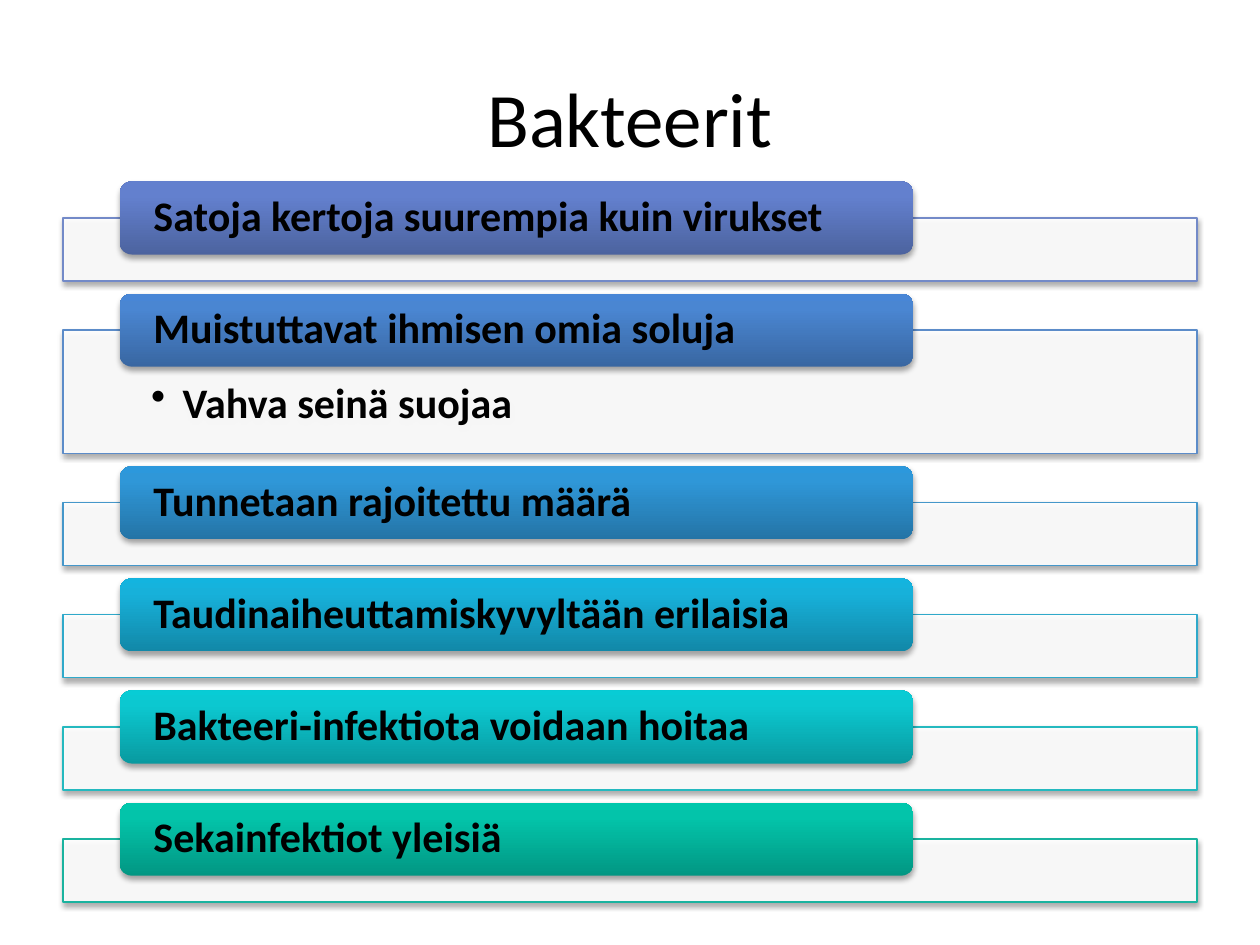
import dataclasses

import pptx
import pptx.dml.color
import pptx.enum.shapes
import pptx.enum.text
import pptx.oxml.ns
import pptx.util
from lxml import etree
from pptx.util import Inches


@dataclasses.dataclass(frozen=True)
class Theme:
    font: str = "Calibri"
    title_size: int = 44
    body_size: int = 24
    text: str = "000000"
    panel: str = "FFFFFF"
    shadow: str = "000000"


THEME = Theme()

# Heading, bullet, panel line, gradient from bottom to top
TOPICS = [
    ("Satoja kertoja suurempia kuin virukset", "", "738AC8",
     ("4C639F", "6380CE", "6180D1")),
    ("Muistuttavat ihmisen omia soluja", "Vahva seinä suojaa", "5C8CC9",
     ("3967A2", "4A86D2", "4886D6")),
    ("Tunnetaan rajoitettu määrä", "", "4597CA",
     ("2474A6", "2F97D8", "2C98DC")),
    ("Taudinaiheuttamiskyvyltään erilaisia", "", "2FA9CA",
     ("1288A8", "17B1DA", "13B4DF")),
    ("Bakteeri-infektiota voidaan hoitaa", "", "24B9BF",
     ("099AA0", "0CC8D0", "08CCD5")),
    ("Sekainfektiot yleisiä", "", "1AB39F",
     ("029783", "03C4AA", "00C8AD")),
]
GRADIENT_STOPS = (0, 80, 100)

FIRST_TOP = 1.73
PANEL_GAP = 0.39
PANEL_HEIGHT = 0.5
BULLET_PANEL_HEIGHT = 0.98
TAB_RISE = 0.29


def rgb(value):
    return pptx.dml.color.RGBColor.from_string(value)


def add_element(parent, tag, **attributes):
    element = etree.SubElement(parent, pptx.oxml.ns.qn(tag))
    for name, value in attributes.items():
        element.set(name, str(value))
    return element


def format_text(shape, size, bold, align, anchor, insets):
    frame = shape.text_frame
    frame.word_wrap = True
    frame.vertical_anchor = anchor
    (frame.margin_left, frame.margin_top,
     frame.margin_right, frame.margin_bottom) = map(Inches, insets)
    para = frame.paragraphs[0]
    para.alignment = align
    for span in para.runs:
        span.font.name = THEME.font
        span.font.size = pptx.util.Pt(size)
        span.font.bold = bold
        span.font.color.rgb = rgb(THEME.text)
    return para


def add_shadow(shape):
    shape.shadow.inherit = False
    effects = shape._element.spPr.find(pptx.oxml.ns.qn("a:effectLst"))
    outer = add_element(effects, "a:outerShdw", blurRad=40000, dist=23000,
                        dir=5400000, rotWithShape=0)
    color = add_element(outer, "a:srgbClr", val=THEME.shadow)
    add_element(color, "a:alpha", val=35000)


def fill_gradient(shape, colors):
    shape.fill.gradient()
    shape.fill.gradient_angle = 90
    stops = next(shape._element.spPr.iter(pptx.oxml.ns.qn("a:gsLst")))
    for stop in list(stops):
        stops.remove(stop)
    for position, color in zip(GRADIENT_STOPS, colors):
        stop = add_element(stops, "a:gs", pos=position * 1000)
        add_element(stop, "a:srgbClr", val=color)


def add_title(page, text):
    title = page.shapes.title
    title.left, title.top = Inches(0.5), Inches(0.3)
    title.width, title.height = Inches(9), Inches(1.25)
    title.text_frame.text = text
    format_text(title, THEME.title_size, False, pptx.enum.text.PP_ALIGN.CENTER,
                pptx.enum.text.MSO_ANCHOR.MIDDLE, (0.1, 0.05, 0.1, 0.05))


def add_panel(page, top, height, line_color, bullet):
    panel = page.shapes.add_shape(
        pptx.enum.shapes.MSO_SHAPE.RECTANGLE,
        Inches(0.5), Inches(top), Inches(9), Inches(height))
    panel.fill.solid()
    panel.fill.fore_color.rgb = rgb(THEME.panel)
    color = next(panel._element.spPr.iter(pptx.oxml.ns.qn("a:srgbClr")))
    add_element(color, "a:alpha", val=90000)
    panel.line.color.rgb = rgb(line_color)
    panel.line.width = pptx.util.Pt(0.75)
    add_shadow(panel)
    if bullet:
        panel.text_frame.text = bullet
        para = format_text(panel, THEME.body_size, True,
                           pptx.enum.text.PP_ALIGN.LEFT,
                           pptx.enum.text.MSO_ANCHOR.TOP,
                           (0.7, 0.41, 0.7, 0.19))
        para.line_spacing = 0.9
        properties = para._p.get_or_add_pPr()
        properties.set("marL", str(Inches(0.25)))
        properties.set("indent", str(-Inches(0.25)))
        add_element(properties, "a:buChar", char="•")


def add_tab(page, top, text, colors):
    tab = page.shapes.add_shape(
        pptx.enum.shapes.MSO_SHAPE.ROUNDED_RECTANGLE,
        Inches(0.95), Inches(top), Inches(6.3), Inches(2 * TAB_RISE))
    fill_gradient(tab, colors)
    tab.line.fill.background()
    add_shadow(tab)
    tab.text_frame.text = text
    para = format_text(tab, THEME.body_size, True,
                       pptx.enum.text.PP_ALIGN.LEFT,
                       pptx.enum.text.MSO_ANCHOR.MIDDLE, (0.24, 0, 0.24, 0))
    para.line_spacing = 0.9


def main():
    deck = pptx.Presentation()
    deck.slide_width, deck.slide_height = Inches(10), Inches(7.5)
    page = deck.slides.add_slide(deck.slide_layouts.get_by_name("Title Only"))

    add_title(page, "Bakteerit")

    # Stacked panels, each with a tab centred on its top edge
    top = FIRST_TOP
    for heading, bullet, line_color, colors in TOPICS:
        height = BULLET_PANEL_HEIGHT if bullet else PANEL_HEIGHT
        add_panel(page, top, height, line_color, bullet)
        add_tab(page, top - TAB_RISE, heading, colors)
        top += height + PANEL_GAP

    deck.save("out.pptx")


if __name__ == "__main__":
    main()
